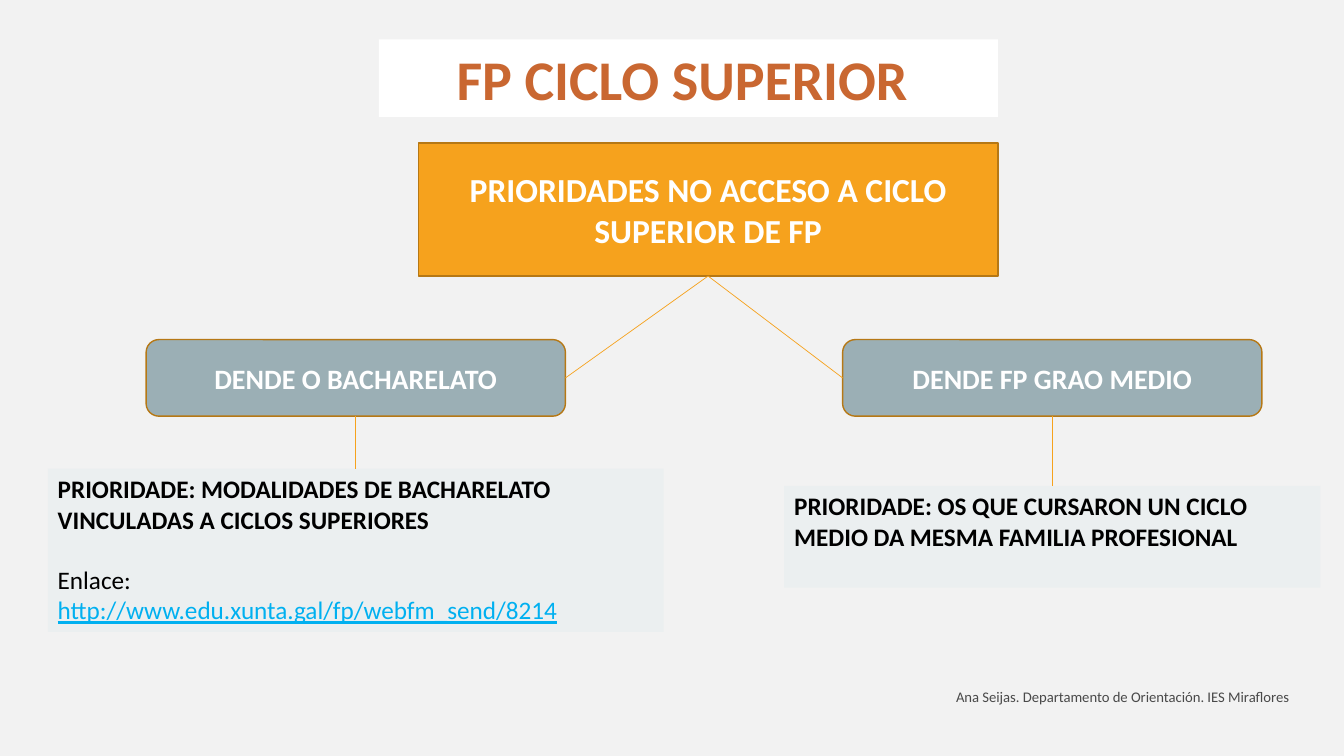
from pptx import Presentation
from pptx.dml.color import RGBColor
from pptx.enum.shapes import MSO_CONNECTOR as Conn, MSO_SHAPE as Kind
from pptx.enum.text import MSO_ANCHOR as Anchor, PP_ALIGN as Align
from pptx.oxml.ns import qn
from pptx.util import Pt
from lxml.etree import SubElement
from dataclasses import dataclass


@dataclass(frozen=True)
class Theme:
    font: str = "Calibri"
    back: str = "F2F2F2"
    white: str = "FFFFFF"
    black: str = "000000"
    grey: str = "494949"
    rust: str = "C96731"
    amber: str = "F6A21D"
    edge: str = "B67815"
    slate: str = "9BAFB5"
    pale: str = "EBEFF0"
    link: str = "00B0F0"
    title: float = 40
    head: float = 24
    node: float = 20
    body: float = 18
    foot: float = 10.5


T = Theme()
WIDE, HIGH = 960, 540

TITLE = "FP CICLO SUPERIOR "
HEAD = "PRIORIDADES NO ACCESO A CICLO SUPERIOR DE FP"
FOOT = "Ana Seijas. Departamento de Orientación. IES Miraflores"
# Each path: node text, node left, side facing the head, note top, width, height, lines
# Each line: text, bold, colour, underline, space before
PATHS = [
    ("DENDE O BACHARELATO", 104.4, 3, 334.8, 440, 116.6, [
        ("PRIORIDADE: MODALIDADES DE BACHARELATO VINCULADAS A CICLOS SUPERIORES",
         True, T.black, False, 0),
        ("Enlace:", False, T.black, False, 21.6),
        ("http://www.edu.xunta.gal/fp/webfm_send/8214", False, T.link, True, 0),
    ]),
    ("DENDE FP GRAO MEDIO", 601.9, 1, 347, 383, 72.7, [
        ("PRIORIDADE: OS QUE CURSARON UN CICLO MEDIO DA MESMA FAMILIA PROFESIONAL",
         True, T.black, False, 0),
    ]),
]
NODE_TOP, NODE_W, NODE_H = 242.6, 299.5, 54.7


def rgb(code):
    return RGBColor.from_string(code)


def write(shape, lines, size, align, anchor):
    frame = shape.text_frame
    frame.word_wrap = True
    frame.vertical_anchor = anchor
    for i, (text, bold, color, under, gap) in enumerate(lines):
        para = frame.add_paragraph() if i else frame.paragraphs[0]
        para.text = text
        para.alignment = align
        para.space_before = Pt(gap)
        font = para.font
        font.name, font.size, font.bold = T.font, Pt(size), bold
        font.color.rgb = rgb(color)
        font.underline = under


def box(slide, kind, area, fill, edge=None):
    shape = slide.shapes.add_shape(kind, *map(Pt, area))
    shape.shadow.inherit = False
    shape.fill.solid()
    shape.fill.fore_color.rgb = rgb(fill)
    if edge:
        shape.line.color.rgb = rgb(edge)
        shape.line.width = Pt(1)
    else:
        shape.line.fill.background()
    return shape


def join(slide, start, out, end, side):
    line = slide.shapes.add_connector(Conn.STRAIGHT, 0, 0, 0, 0)
    line.begin_connect(start, out)
    line.end_connect(end, side)
    line.line.color.rgb = rgb(T.amber)
    line.line.width = Pt(0.5)
    SubElement(line._element.spPr, qn("a:effectLst"))


def main():
    deck = Presentation()
    deck.slide_width, deck.slide_height = Pt(WIDE), Pt(HIGH)
    slide = deck.slides.add_slide(deck.slide_layouts[6])
    slide.background.fill.solid()
    slide.background.fill.fore_color.rgb = rgb(T.back)

    foot = slide.shapes.add_textbox(*map(Pt, (328.3, 483.1, 599.8, 28.8)))
    write(foot, [(FOOT, False, T.grey, False, 0)], T.foot, Align.RIGHT, Anchor.MIDDLE)

    title = box(slide, Kind.RECTANGLE, (270.7, 28.1, 442.1, 55.4), T.white)
    write(title, [(TITLE, True, T.rust, False, 0)], T.title, Align.CENTER, Anchor.TOP)

    head = box(slide, Kind.RECTANGLE, (298.8, 102.2, 414, 95), T.amber, T.edge)
    write(head, [(HEAD, True, T.white, False, 0)], T.head, Align.CENTER, Anchor.MIDDLE)

    for name, left, side, top, wide, high, lines in PATHS:
        node = box(slide, Kind.ROUNDED_RECTANGLE,
                   (left, NODE_TOP, NODE_W, NODE_H), T.slate, T.edge)
        write(node, [(name, True, T.white, False, 0)], T.node, Align.CENTER, Anchor.MIDDLE)
        mid = left + NODE_W / 2
        note = box(slide, Kind.RECTANGLE, (mid - wide / 2, top, wide, high), T.pale)
        write(note, lines, T.body, Align.LEFT, Anchor.TOP)
        join(slide, head, 2, node, side)
        join(slide, node, 2, note, 0)

    deck.save("out.pptx")


if __name__ == "__main__":
    main()
